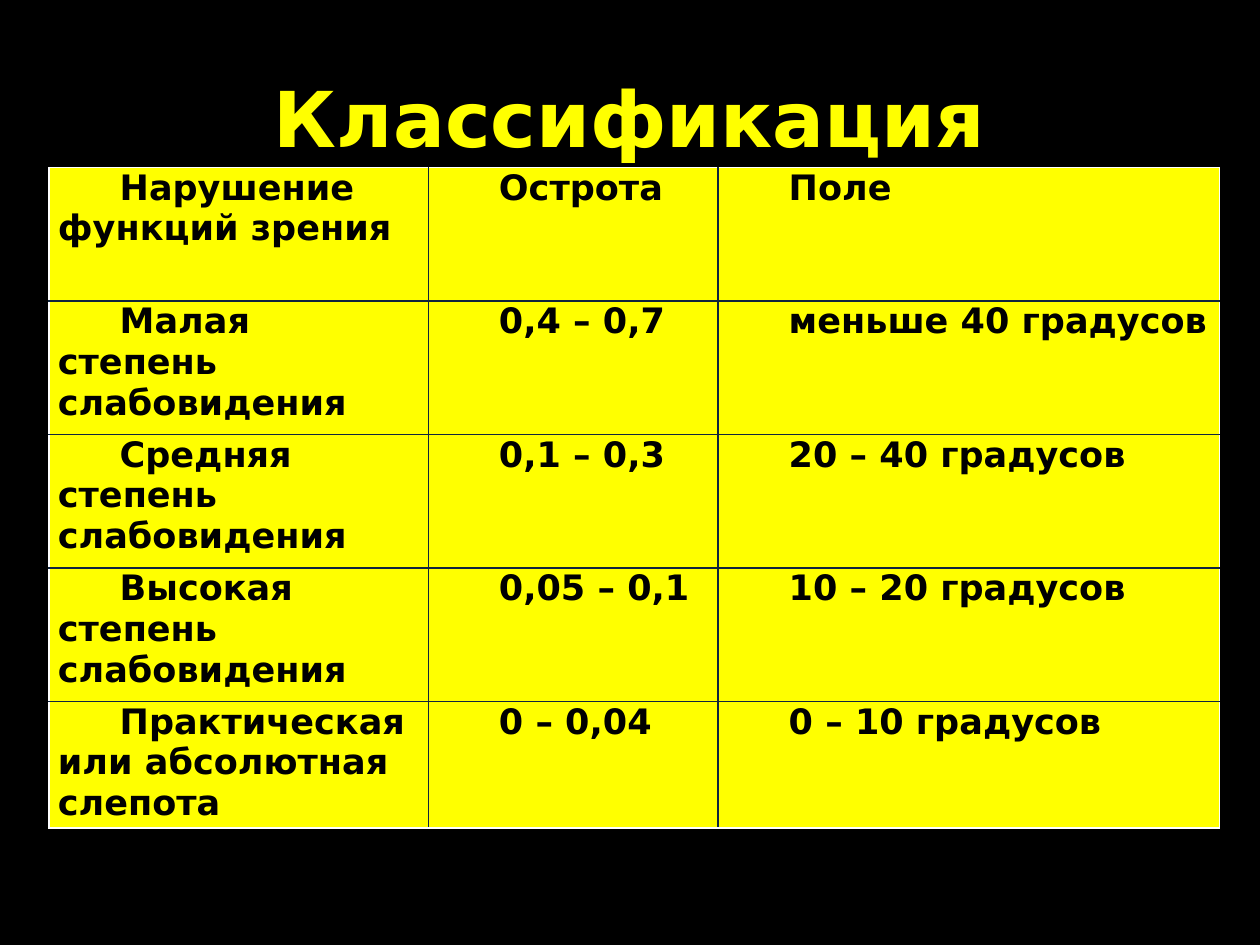
from lxml.etree import SubElement
from pptx import Presentation
from pptx.dml.color import RGBColor
from pptx.enum.text import MSO_ANCHOR as Anchor, PP_ALIGN as Align
from pptx.oxml.ns import qn
from pptx.util import Inches, Pt

TITLE = "Классификация"
ROWS = [
    ("Нарушение функций зрения", "Острота", "Поле"),
    ("Малая степень слабовидения", "0,4 – 0,7", "меньше 40 градусов"),
    ("Средняя степень слабовидения", "0,1 – 0,3", "20 – 40 градусов"),
    ("Высокая степень слабовидения", "0,05 – 0,1", "10 – 20 градусов"),
    ("Практическая или абсолютная слепота", "0 – 0,04", "0 – 10 градусов"),
]
COLUMN_WIDTHS = [3.01, 2.3, 3.98]
ROW_HEIGHTS = [1.06, 1.06, 1.06, 1.06, 0.85]
FONT = "DejaVu Sans"
BLACK, YELLOW, WHITE, NAVY = "000000", "FFFF00", "FFFFFF", "0F243E"


def set_fill(fill, color):
    fill.solid()
    fill.fore_color.rgb = RGBColor.from_string(color)


def write(frame, text, size=20, color=BLACK, align=Align.LEFT, indent=0):
    frame.word_wrap = True
    paragraph = frame.paragraphs[0]
    paragraph.alignment = align
    properties = paragraph._p.get_or_add_pPr()
    properties.set("marL", "0")
    properties.set("indent", str(Inches(indent)))
    run = paragraph.add_run()
    run.text = text
    run.font.name = FONT
    run.font.size = Pt(size)
    run.font.bold = True
    set_fill(run.font.fill, color)


def set_borders(cell, outer_sides):
    properties = cell._tc.get_or_add_tcPr()
    for side, is_outer in outer_sides.items():
        line = SubElement(properties, qn(f"a:ln{side}"), w=str(Pt(1)))
        solid = SubElement(line, qn("a:solidFill"))
        SubElement(solid, qn("a:srgbClr"), val=WHITE if is_outer else NAVY)


def add_title(slide):
    title = slide.shapes.add_textbox(Inches(0.5), Inches(0.3), Inches(9), Inches(1.25))
    title.text_frame.vertical_anchor = Anchor.MIDDLE
    write(title.text_frame, TITLE, size=44, color=YELLOW, align=Align.CENTER)


def add_classification(slide):
    table = slide.shapes.add_table(
        len(ROWS), len(COLUMN_WIDTHS), Inches(0.39), Inches(1.33),
        Inches(sum(COLUMN_WIDTHS)), Inches(sum(ROW_HEIGHTS)),
    ).table
    for column, width in zip(table.columns, COLUMN_WIDTHS):
        column.width = Inches(width)
    for row, height in zip(table.rows, ROW_HEIGHTS):
        row.height = Inches(height)
    last_row, last_column = len(ROWS) - 1, len(COLUMN_WIDTHS) - 1
    for r, texts in enumerate(ROWS):
        for c, text in enumerate(texts):
            cell = table.cell(r, c)
            cell.margin_left = cell.margin_right = Inches(0.07)
            cell.margin_top = cell.margin_bottom = 0
            set_borders(cell, {"L": c == 0, "R": c == last_column,
                               "T": r == 0, "B": r == last_row})
            set_fill(cell.fill, YELLOW)
            write(cell.text_frame, text, indent=0.49)


def main():
    presentation = Presentation()
    presentation.slide_width = Inches(10)
    presentation.slide_height = Inches(7.5)
    slide = presentation.slides.add_slide(presentation.slide_layouts[6])
    set_fill(slide.background.fill, BLACK)
    add_title(slide)
    add_classification(slide)
    presentation.save("out.pptx")


if __name__ == "__main__":
    main()
